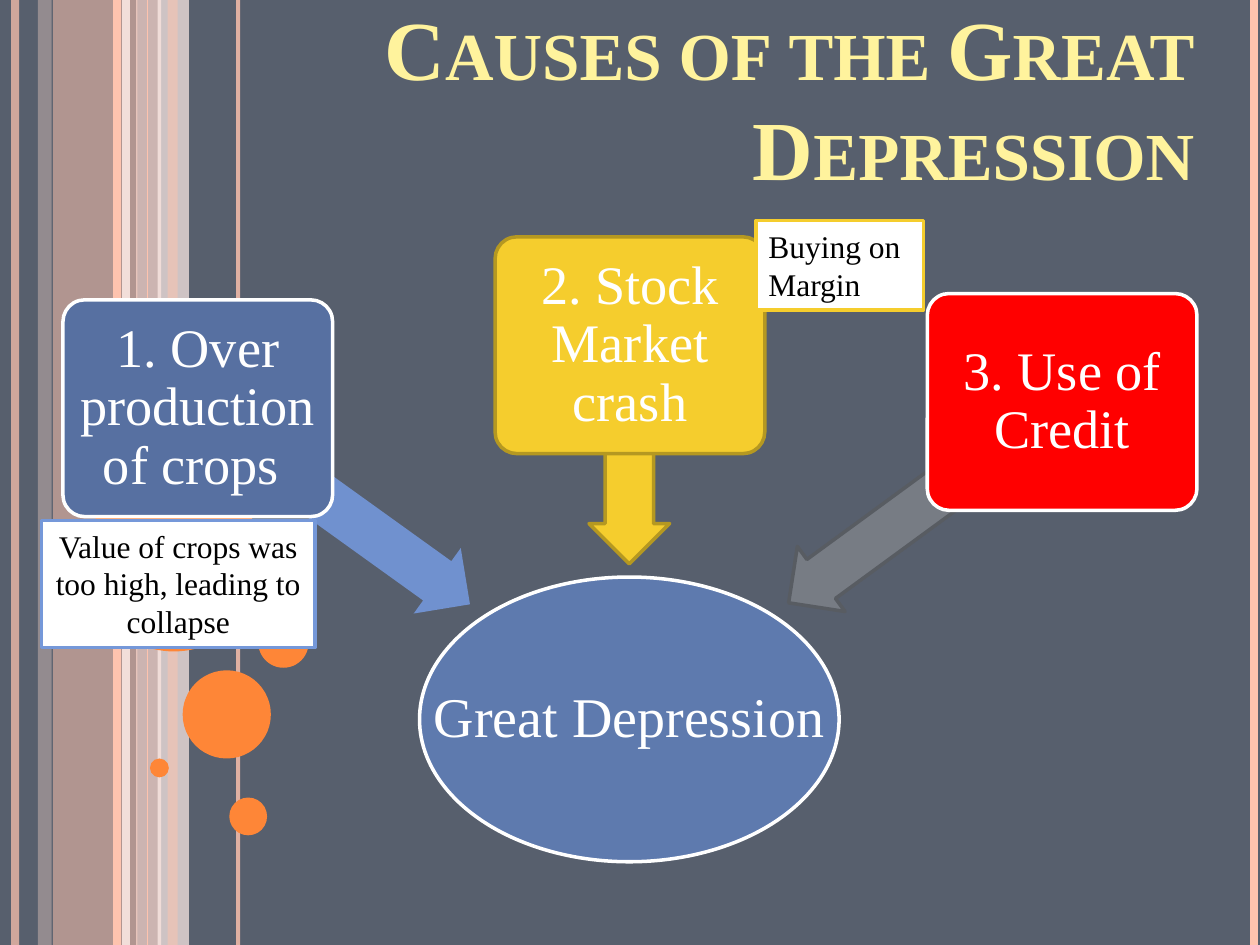
from lxml.etree import SubElement
from pptx import Presentation
from pptx.dml.color import RGBColor
from pptx.enum.shapes import MSO_CONNECTOR as Connector, MSO_SHAPE as Shape
from pptx.enum.text import MSO_ANCHOR as Anchor, MSO_AUTO_SIZE as AutoSize, PP_ALIGN as Align
from pptx.oxml.ns import qn
from pptx.util import Pt

PX = 9144  # 100 px to the inch
PAGE_WIDTH, PAGE_HEIGHT = 1000, 750
FONT = "Times New Roman"
WHITE, PEACH, PALE, CREAM, ORANGE = "FFFFFF", "FEC3AE", "FFD9CE", "FFEDE8", "FE8637"
YELLOW, DARK_YELLOW = "F5CD2D", "B59821"


def emu(*lengths):
    return [round(length * PX) for length in lengths]


def paint(color_format, value, opacity=100):
    color_format.rgb = RGBColor.from_string(value)
    if opacity < 100:
        color = color_format._color._xClr
        SubElement(color, qn("a:alpha")).set("val", str(opacity * 1000))


def add_box(page, kind, box, fill, line=None, opacity=100):
    shape = page.shapes.add_shape(kind, *emu(*box))
    shape.shadow.inherit = False
    shape.fill.solid()
    paint(shape.fill.fore_color, fill, opacity)
    if line:
        paint(shape.line.color, line)
        shape.line.width = Pt(2)
    else:
        shape.line.fill.background()
    return shape


def write(shape, text, size, color, align=Align.CENTER, anchor=Anchor.MIDDLE, margin=None):
    frame = shape.text_frame
    frame.text = text
    frame.word_wrap = True
    frame.auto_size = AutoSize.NONE
    frame.vertical_anchor = anchor
    if margin is not None:
        frame.margin_left = frame.margin_right = frame.margin_top = frame.margin_bottom = margin * PX
    para = frame.paragraphs[0]
    para.alignment = align
    font = para.runs[0].font
    font.name, font.size = FONT, Pt(size)
    paint(font.color, color)
    return para


def add_rule(page, x, color, width, opacity=100):
    """Draw a vertical line over the full height of the page."""
    rule = page.shapes.add_connector(Connector.STRAIGHT, *emu(x, 0, x, PAGE_HEIGHT))
    paint(rule.line.color, color, opacity)
    rule.line.width = Pt(width)
    SubElement(rule._element.spPr, qn("a:effectLst"))


def add_decoration(page):
    """Draw the stripes and bubbles at the page edges."""
    bands = [(42, 67, PEACH, 54), (30, 11, PALE, 36), (108, 20, PALE, 70),
             (125, 25, CREAM, 71), (133, 8, PEACH, 51)]
    for x, width, color, opacity in bands:
        add_box(page, Shape.RECTANGLE, (x, 0, width, PAGE_HEIGHT), color, opacity=opacity)
    rules = [(12, PEACH, 4.5, 73), (100, CREAM, 4.5, 83), (93, PEACH, 4.5, 100),
             (189, PEACH, 2.25, 82), (117, PEACH, 0.75, 100), (995, PEACH, 4.5, 100)]
    for rule in rules:
        add_rule(page, *rule)
    bubbles = [(67, 375, 142), (145, 532, 70), (119, 602, 15), (182, 633, 30), (205, 490, 40)]
    for x, y, size in bubbles:
        add_box(page, Shape.OVAL, (x, y, size, size), ORANGE)


def add_title(page, box):
    title = page.shapes.title
    title.left, title.top, title.width, title.height = emu(*box)
    para = write(title, "Causes of the Great Depression", 48, "FFF39D", Align.RIGHT, Anchor.BOTTOM)
    font = para.runs[0].font
    font.bold = True
    font._element.set("cap", "small")


def add_arrow(page, box, rotation, fill, line):
    arrow = add_box(page, Shape.LEFT_ARROW, box, fill, line)
    arrow.rotation = rotation
    arrow.adjustments[0], arrow.adjustments[1] = 0.6, 0.5


def add_cause(page, box, text, fill, line):
    cause = add_box(page, Shape.ROUNDED_RECTANGLE, box, fill, line)
    cause.adjustments[0] = 0.1
    write(cause, text, 31, WHITE, margin=1).line_spacing = 0.9


def add_diagram(page, left, top):
    """Draw three causes whose arrows point at their common result."""
    result = add_box(page, Shape.OVAL, (left + 283, top + 270, 333, 226), "5E7AAE", WHITE)
    write(result, "Great Depression", 32, WHITE, margin=2).line_spacing = 0.9
    result.text_frame.word_wrap = False
    causes = [
        ("1. Over production of crops ", (0, 50), "5770A1", WHITE,
         (82, 182, 266, 64), 215.7, "7091CF", None),
        ("2. Stock Market crash", (343, 0), YELLOW, DARK_YELLOW,
         (363, 141, 173, 64), 270, YELLOW, DARK_YELLOW),
        ("3. Use of Credit", (686, 45), "FF0000", WHITE,
         (550, 179, 269, 64), 323.8, "777C84", "585C62"),
    ]
    for text, (x, y), fill, line, (arrow_x, arrow_y, *size), rotation, *arrow_colors in causes:
        add_arrow(page, (left + arrow_x, top + arrow_y, *size), rotation, *arrow_colors)
        add_cause(page, (left + x, top + y, 214, 172), text, fill, line)


def add_note(page, box, text, line, align):
    note = add_box(page, Shape.RECTANGLE, box, WHITE, line)
    write(note, text, 18, "000000", align, Anchor.TOP)


def main():
    deck = Presentation()
    deck.slide_width, deck.slide_height = emu(PAGE_WIDTH, PAGE_HEIGHT)
    page = deck.slides.add_slide(deck.slide_layouts[5])
    page.background.fill.solid()
    paint(page.background.fill.fore_color, "575F6D")
    add_decoration(page)
    add_title(page, (0, -17, 958, 179))
    add_diagram(page, 50, 188)
    add_note(page, (600, 175, 133, 71), "Buying on Margin", YELLOW, Align.LEFT)
    add_note(page, (33, 413, 217, 101), "Value of crops was too high, leading to collapse",
             "7598D9", Align.CENTER)
    deck.save("out.pptx")


if __name__ == "__main__":
    main()
